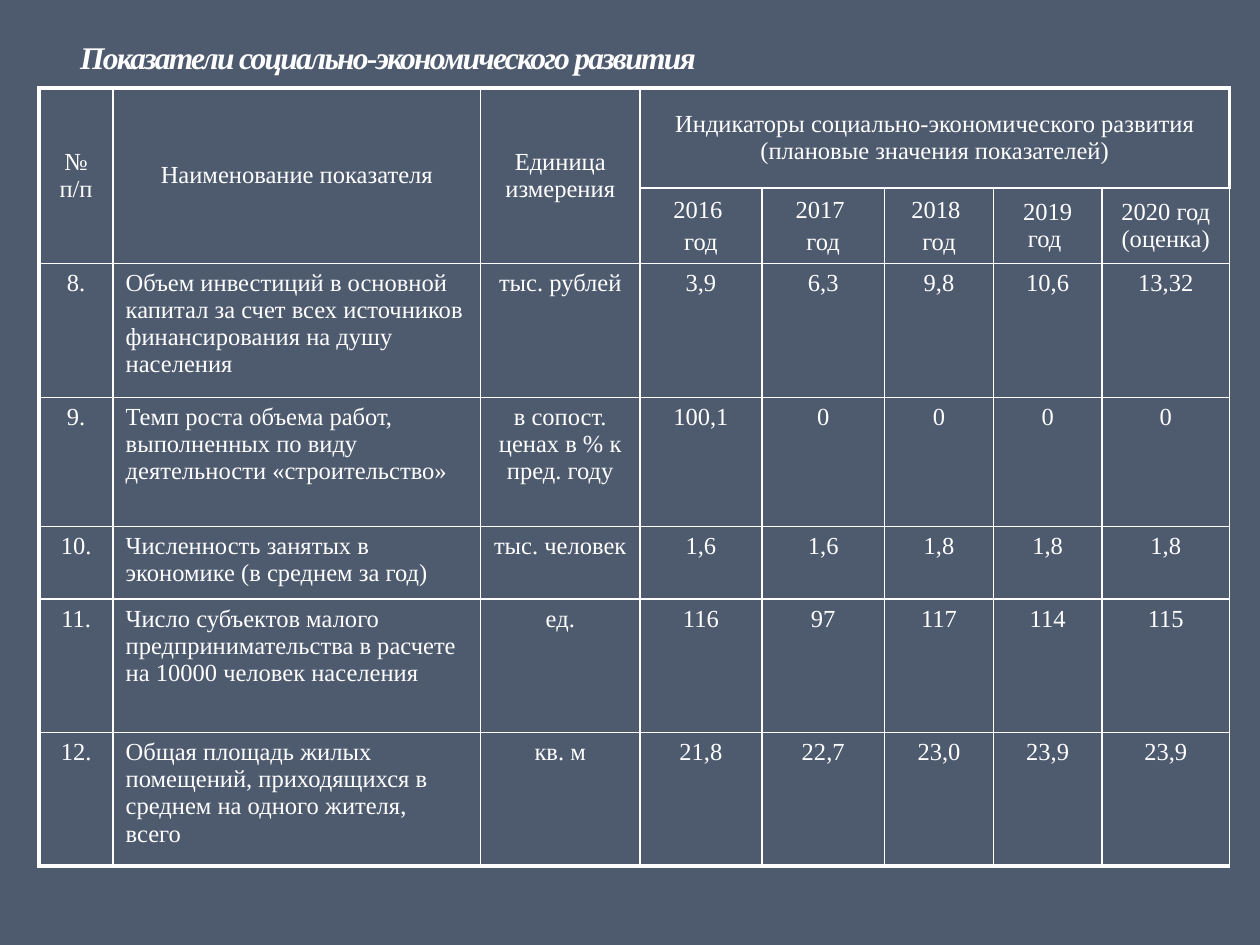
from lxml import etree
from pptx import Presentation
from pptx.dml.color import RGBColor
from pptx.enum.text import MSO_ANCHOR, PP_ALIGN
from pptx.oxml.ns import qn
from pptx.util import Cm, Pt

LEFT, CENTER = PP_ALIGN.LEFT, PP_ALIGN.CENTER
TOP, MIDDLE = MSO_ANCHOR.TOP, MSO_ANCHOR.MIDDLE
WHITE, SLATE = "FFFFFF", "4E5B6F"
THICK, THIN = 2.25, 1


def paint(fill, color):
    fill.solid()
    fill.fore_color.rgb = RGBColor.from_string(color)


def style(para, align, **form):
    para.alignment = align
    for run in para.runs:
        paint(run.font.fill, WHITE)
        for key, value in form.items():
            setattr(run.font, key, value)


deck = Presentation()
deck.slide_width, deck.slide_height = Cm(25.4), Cm(19.05)
slide = deck.slides.add_slide(deck.slide_layouts[5])
paint(slide.background.fill, SLATE)

title = slide.shapes.title
place = {"left": 0.58, "top": 0.58, "width": 14.48, "height": 1.12}
for key, value in place.items():
    setattr(title, key, Cm(value))
title.text = "Показатели социально-экономического развития"
title.text_frame.vertical_anchor = MIDDLE
para = title.text_frame.paragraphs[0]
style(para, CENTER, name="Times New Roman", size=Pt(18), bold=True, italic=True)
para.runs[0].font._element.set("spc", "-100")

rows = [
    ["№ п/п", "Наименование показателя", "Единица измерения",
     "Индикаторы социально-экономического развития (плановые значения показателей)",
     "", "", "", ""],
    ["", "", "", "2016 \nгод", "2017 \nгод", "2018 \nгод", "2019 год ",
     "2020 год (оценка)"],
    ["8.", "Объем инвестиций в основной капитал за счет всех источников "
     "финансирования на душу населения", "тыс. рублей",
     "3,9", "6,3", "9,8", "10,6", "13,32"],
    ["9.", "Темп роста объема работ, выполненных по виду деятельности «строительство»",
     "в сопост. ценах в % к пред. году", "100,1", "0", "0", "0", "0"],
    ["10.", "Численность занятых в экономике (в среднем за год)",
     "тыс. человек", "1,6", "1,6", "1,8", "1,8", "1,8"],
    ["11.", "Число субъектов малого предпринимательства в расчете на 10000 "
     "человек населения", "ед.", "116", "97", "117", "114", "115"],
    ["12.", "Общая площадь жилых помещений, приходящихся в среднем на одного "
     "жителя, всего", "кв. м", "21,8", "22,7", "23,0", "23,9", "23,9"],
]
widths = [1.49, 7.41, 3.21, 2.46, 2.47, 2.2, 2.18, 2.58]
heights = [2.02, 1.52, 2.7, 2.6, 1.47, 2.69, 2.69]
last = len(rows) - 1

frame = slide.shapes.add_table(len(rows), len(widths), Cm(0.79), Cm(1.77),
                               Cm(sum(widths)), Cm(sum(heights)))
table = frame.table
table.first_row = table.horz_banding = False
for col, width in zip(table.columns, widths):
    col.width = Cm(width)
for row, height in zip(table.rows, heights):
    row.height = Cm(height)
for c in range(3):
    table.cell(0, c).merge(table.cell(1, c))
table.cell(0, 3).merge(table.cell(0, 7))

for r, row in enumerate(rows):
    for c, text in enumerate(row):
        cell = table.cell(r, c)
        cell.fill.background()
        cell.vertical_anchor = MIDDLE if r < 2 else TOP
        if text:
            cell.text = text
        for para in cell.text_frame.paragraphs:
            para.space_before = Pt(2.8)
            style(para, LEFT if c == 1 and r > 1 else CENTER,
                  name="Times New Roman", size=Pt(14))
        edges = {"lnL": c == 0, "lnR": r == 0 and c > 2,
                 "lnT": r == 0, "lnB": r == last}
        props = cell._tc.get_or_add_tcPr()
        for spot, (side, outer) in enumerate(edges.items()):
            line = etree.Element(qn("a:" + side), w=str(Pt(THICK if outer else THIN)))
            fill = etree.SubElement(line, qn("a:solidFill"))
            etree.SubElement(fill, qn("a:srgbClr"), val=WHITE)
            props.insert(spot, line)

deck.save("out.pptx")
